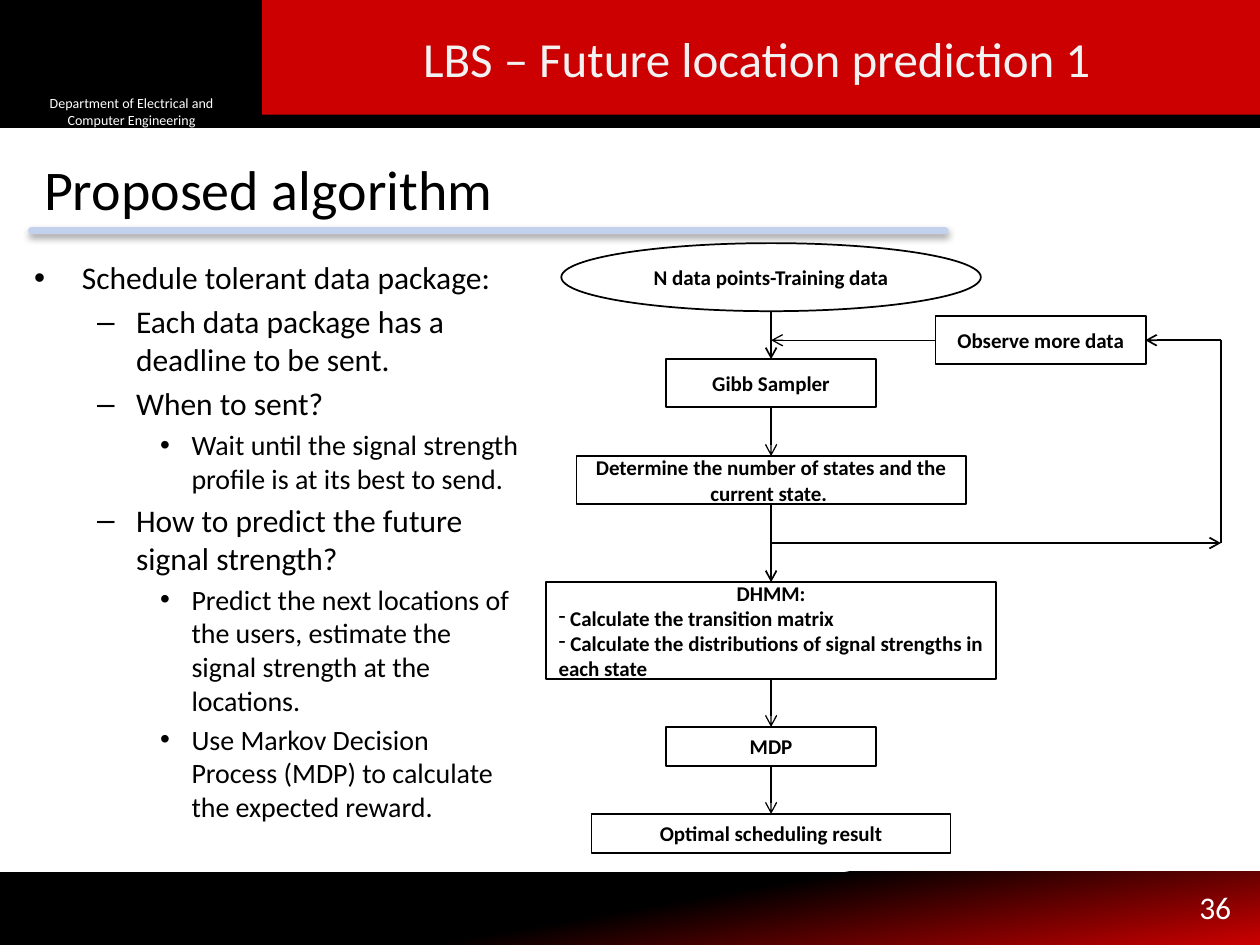
import pptx
import pptx.util
import pptx.dml.color
import pptx.enum.shapes
import pptx.enum.text
import pptx.oxml.ns
from lxml import etree

Inches, Pt = pptx.util.Inches, pptx.util.Pt
SHAPE = pptx.enum.shapes.MSO_SHAPE
ALIGN = pptx.enum.text.PP_ALIGN
ANCHOR = pptx.enum.text.MSO_ANCHOR
qn = pptx.oxml.ns.qn

COLORS = {
    "black": "000000",
    "red": "CC0000",
    "white": "FFFFFF",
    "header": "F2F2F2",
    "rule": "C2D1ED",
}


def rgb(name):
    return pptx.dml.color.RGBColor.from_string(COLORS[name])


class SlideBuilder:
    """Holds the style and the current slide."""

    font = "Calibri"

    def __init__(self, slide):
        self.slide = slide

    def style(self, paragraph, size, color="black", align=ALIGN.LEFT, bold=False):
        paragraph.alignment = align
        font = paragraph.font
        font.name, font.size, font.bold = self.font, Pt(size), bold
        font.color.rgb = rgb(color)

    def bullet(self, paragraph, char, margin=0, hanging=0):
        properties = paragraph._p.get_or_add_pPr()
        properties.set("marL", str(Inches(margin)))
        properties.set("indent", str(Inches(-hanging)))
        if char:
            etree.SubElement(properties, qn("a:buChar")).set("char", char)
        else:
            etree.SubElement(properties, qn("a:buNone"))

    def placeholder(self, index, left, top, width, height, anchor):
        """Move a placeholder and bring it in front of the bars."""
        holder = self.slide.placeholders[index]
        holder.left, holder.top = Inches(left), Inches(top)
        holder.width, holder.height = Inches(width), Inches(height)
        holder.element.getparent().append(holder.element)
        frame = holder.text_frame
        frame.auto_size = pptx.enum.text.MSO_AUTO_SIZE.NONE
        frame.vertical_anchor = anchor
        return frame

    def shape(self, kind, left, top, width, height, fill=None, line=None, line_width=1):
        shape = self.slide.shapes.add_shape(
            kind, Inches(left), Inches(top), Inches(width), Inches(height))
        shape.shadow.inherit = False
        if fill:
            shape.fill.solid()
            shape.fill.fore_color.rgb = rgb(fill)
        else:
            shape.fill.background()
        if line:
            shape.line.color.rgb = rgb(line)
            shape.line.width = Pt(line_width)
        else:
            shape.line.fill.background()
        shape.text_frame.word_wrap = True
        shape.text_frame.vertical_anchor = ANCHOR.MIDDLE
        return shape

    def flow_box(self, center, top, width, height, text, kind=SHAPE.RECTANGLE):
        box = self.shape(kind, center - width / 2, top, width, height, line="black")
        box.text_frame.text = text
        self.style(box.text_frame.paragraphs[0], 12, align=ALIGN.CENTER, bold=True)
        return box.text_frame

    def line(self, start, end, width=1, color="black", arrow=True):
        connector = self.slide.shapes.add_connector(
            pptx.enum.shapes.MSO_CONNECTOR.STRAIGHT,
            *(Inches(value) for value in (*start, *end)))
        connector.line.color.rgb = rgb(color)
        connector.line.width = Pt(width)
        if arrow:
            etree.SubElement(connector.line._ln, qn("a:tailEnd")).set("type", "arrow")
        effects = etree.SubElement(connector.element.spPr, qn("a:effectLst"))
        return connector, effects

    def label(self, left, top, width, height, text, size, color):
        box = self.slide.shapes.add_textbox(
            Inches(left), Inches(top), Inches(width), Inches(height))
        box.text_frame.word_wrap = True
        box.text_frame.text = text
        self.style(box.text_frame.paragraphs[0], size, color)


def add_bars(builder):
    # Footer gradient
    footer = builder.shape(SHAPE.RECTANGLE, 0, 6.92, 10, 0.58)
    footer.fill.gradient()
    footer.fill.gradient_angle = 280
    for stop, position, color in zip(footer.fill.gradient_stops, (0.5, 1), ("black", "red")):
        stop.position = position
        stop.color.rgb = rgb(color)

    # Header bars and department
    builder.shape(SHAPE.RECTANGLE, 0, 0, 10, 1, "black", "black", 2)
    builder.shape(SHAPE.RECTANGLE, 2.08, -0.01, 7.92, 0.92, "red")
    department = builder.shape(SHAPE.RECTANGLE, 0.17, 0.76, 1.75, 0.25, "black").text_frame
    department.text = "Department of Electrical and Computer Engineering"
    builder.style(department.paragraphs[0], 8, "white", ALIGN.CENTER)

    # Rule under the title, with a soft shadow
    rule, effects = builder.line((0.25, 1.83), (7.5, 1.83), 4, "rule", arrow=False)
    rule.line._ln.set("cap", "rnd")
    shadow = etree.SubElement(effects, qn("a:outerShdw"), blurRad=str(Pt(4)),
                              dist=str(Pt(2)), dir=str(85 * 60000))
    shadow_color = etree.SubElement(shadow, qn("a:srgbClr"), val=COLORS["black"])
    etree.SubElement(shadow_color, qn("a:alpha"), val="40000")


def add_texts(builder):
    # Title and section header
    title = builder.placeholder(0, 0.25, 1.08, 9.33, 0.83, ANCHOR.MIDDLE)
    title.text = "Proposed algorithm"
    builder.style(title.paragraphs[0], 32)

    section = builder.placeholder(1, 2.42, 0.17, 7.17, 0.58, ANCHOR.MIDDLE)
    section.text = "LBS – Future location prediction 1"
    builder.bullet(section.paragraphs[0], None)
    section.paragraphs[0].space_before = Pt(0)
    builder.style(section.paragraphs[0], 28, "header", ALIGN.CENTER)

    # Outline: bullet, margin, hanging indent and size by level
    levels = [("•", 0.38, 0.38, 18), ("–", 0.81, 0.31, 18), ("•", 1.25, 0.25, 16)]
    points = [
        (0, "Schedule tolerant data package:"),
        (1, "Each data package has a deadline to be sent."),
        (1, "When to sent?"),
        (2, "Wait until the signal strength profile is at its best to send."),
        (1, "How to predict the future signal strength?"),
        (2, "Predict the next locations of the users, estimate the signal strength "
            "at the locations."),
        (2, "Use Markov Decision Process (MDP) to calculate the expected reward."),
    ]
    outline = builder.placeholder(2, 0.17, 2, 4.06, 4.58, ANCHOR.TOP)
    outline.text = "\n".join(text for _, text in points)
    for number, (paragraph, (level, _)) in enumerate(zip(outline.paragraphs, points)):
        char, margin, hanging, size = levels[level]
        paragraph.level = level
        builder.bullet(paragraph, char, margin, hanging)
        paragraph.space_before = Pt(0.2 * size if number else 0)
        builder.style(paragraph, size)

    builder.label(9.42, 7, 0.5, 0.4, "36", 18, "white")


def add_flowchart(builder):
    axis, loop_x, loop_top, loop_bottom = 6.12, 9.69, 2.7, 4.31

    # Steps down the axis
    builder.flow_box(axis, 1.93, 3.33, 0.54, "N data points-Training data", SHAPE.OVAL)
    builder.flow_box(axis, 2.85, 1.67, 0.38, "Gibb Sampler")
    builder.flow_box(axis, 3.62, 3.09, 0.38,
                     "Determine the number of states and the current state. ")
    dhmm = builder.flow_box(axis, 4.62, 3.57, 0.77, "DHMM:")
    for task in (" Calculate the transition matrix",
                 " Calculate the distributions of signal strengths in each state"):
        paragraph = dhmm.add_paragraph()
        paragraph.text = task
        builder.bullet(paragraph, "-")
        builder.style(paragraph, 12, align=ALIGN.JUSTIFY, bold=True)
    builder.flow_box(axis, 5.77, 1.67, 0.31, "MDP")
    builder.flow_box(axis, 6.46, 2.85, 0.31, "Optimal scheduling result")
    builder.flow_box(8.26, 2.51, 1.67, 0.38, "Observe more data")

    # Arrows between the steps
    for top, bottom, width in ((2.47, 2.85, 1), (3.24, 3.62, 0.75), (4, 4.62, 1),
                               (5.38, 5.77, 0.75), (6.07, 6.46, 0.75)):
        builder.line((axis, top), (axis, bottom), width)

    # Feedback loop
    builder.line((axis, loop_bottom), (loop_x, loop_bottom))
    builder.line((loop_x, loop_bottom), (loop_x, loop_top), arrow=False)
    builder.line((loop_x, loop_top), (9.09, loop_top))
    builder.line((7.43, loop_top), (axis, loop_top), 0.75)


def main():
    deck = pptx.Presentation()
    deck.slide_width, deck.slide_height = Inches(10), Inches(7.5)
    two_content = deck.slide_layouts[3]
    builder = SlideBuilder(deck.slides.add_slide(two_content))
    add_bars(builder)
    add_texts(builder)
    add_flowchart(builder)
    deck.save("out.pptx")


if __name__ == "__main__":
    main()
